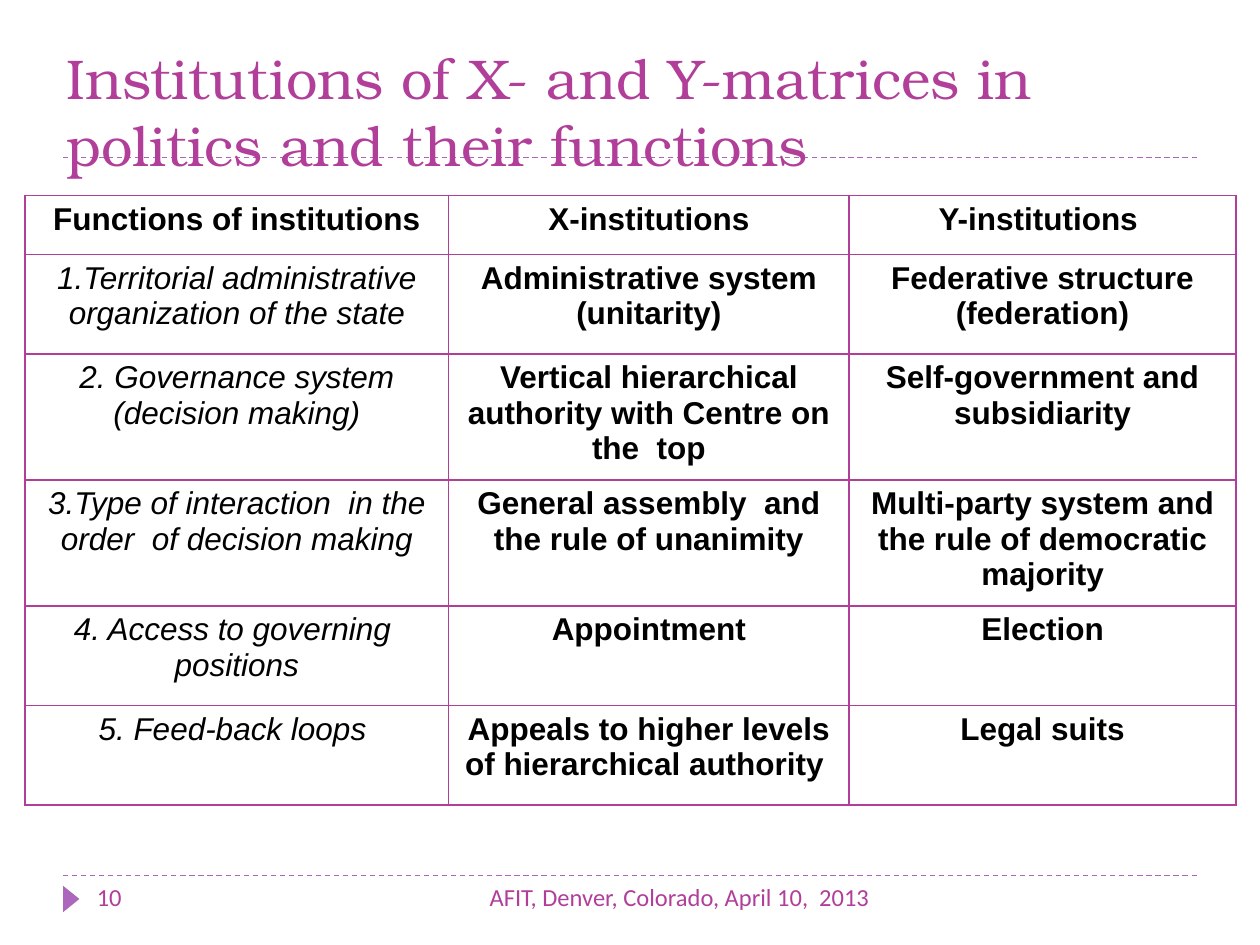
import pptx
import pptx.util
import pptx.dml.color
import pptx.enum.dml
import pptx.enum.shapes
import pptx.enum.text
import pptx.oxml
import pptx.oxml.ns
from lxml import etree

WIDE, HIGH = 10, 7.5
PINK, LILAC, BLACK = "B13F9A", "AC66BB", "000000"
SIDE = 0.05 * WIDE  # margin of the rules
COLS = [3.36, 3.18, 3.07]
ROWS = [0.47] + [0.79] * 5
CELLS = [
    ["Functions of institutions", "X-institutions", "Y-institutions "],
    ["1.Territorial administrative organization of the state",
     "Administrative system (unitarity)",
     "Federative structure (federation)"],
    ["2. Governance system (decision making)",
     "Vertical hierarchical authority with Centre on the  top",
     "Self-government and subsidiarity"],
    ["3.Type of interaction  in the order  of decision making",
     "General assembly  and the rule of unanimity",
     "Multi-party system and the rule of democratic majority"],
    ["4. Access to governing  positions", "Appointment", "Election"],
    ["5. Feed-back loops ",
     "Appeals to higher levels of hierarchical authority ",
     "Legal suits"],
]
ALIGN = pptx.enum.text.PP_ALIGN
ANCHOR = pptx.enum.text.MSO_ANCHOR
inch = pptx.util.Inches


def color(code):
    return pptx.dml.color.RGBColor.from_string(code)


def style(para, face, size, code, align=ALIGN.LEFT, bold=False, slant=False):
    para.alignment = align
    font = para.font
    font.name, font.size = face, pptx.util.Pt(size)
    font.bold, font.italic = bold, slant
    font.color.rgb = color(code)


def add_text(slide, box, words, face, size, align=ALIGN.LEFT,
             anchor=ANCHOR.TOP):
    frame = slide.shapes.add_textbox(*map(inch, box)).text_frame
    frame.word_wrap = True
    frame.vertical_anchor = anchor
    frame.text = words
    style(frame.paragraphs[0], face, size, PINK, align)


def add_rule(slide, y):
    rule = slide.shapes.add_connector(
        pptx.enum.shapes.MSO_CONNECTOR.STRAIGHT,
        inch(SIDE), inch(y), inch(WIDE - SIDE), inch(y))
    rule.line.color.rgb = color(LILAC)
    rule.line.width = pptx.util.Pt(0.75)
    rule.line.dash_style = pptx.enum.dml.MSO_LINE.DASH
    etree.SubElement(rule._element.spPr, pptx.oxml.ns.qn("a:effectLst"))


def add_mark(slide, box):
    mark = slide.shapes.add_shape(
        pptx.enum.shapes.MSO_SHAPE.ISOSCELES_TRIANGLE, *map(inch, box))
    mark.rotation = 90
    mark.shadow.inherit = False
    mark.fill.solid()
    mark.fill.fore_color.rgb = color(LILAC)
    mark.line.fill.background()


def add_edges(cell, code, points):
    props = cell._tc.get_or_add_tcPr()
    for spot, side in enumerate(("lnL", "lnR", "lnT", "lnB")):
        edge = pptx.oxml.parse_xml(
            f'<a:{side} {pptx.oxml.ns.nsdecls("a")} '
            f'w="{int(pptx.util.Pt(points))}"><a:solidFill>'
            f'<a:srgbClr val="{code}"/></a:solidFill></a:{side}>')
        props.insert(spot, edge)


def add_grid(slide, left, top):
    grid = slide.shapes.add_table(
        len(ROWS), len(COLS), inch(left), inch(top),
        inch(sum(COLS)), inch(sum(ROWS))).table
    for col, width in zip(grid.columns, COLS):
        col.width = inch(width)
    for row, height in zip(grid.rows, ROWS):
        row.height = inch(height)
    for r, line in enumerate(CELLS):
        for c, words in enumerate(line):
            cell = grid.cell(r, c)
            cell.text = words
            cell.fill.background()
            label = r > 0 and c == 0
            style(cell.text_frame.paragraphs[0], "Arial", 18, BLACK,
                  ALIGN.CENTER, bold=not label, slant=label)
            add_edges(cell, PINK, 1)


def main():
    deck = pptx.Presentation()
    deck.slide_width, deck.slide_height = inch(WIDE), inch(HIGH)
    slide = deck.slides.add_slide(deck.slide_layouts[6])
    foot = 6.95

    # Rules and page mark
    add_rule(slide, foot)
    add_rule(slide, HIGH / 6)
    add_mark(slide, (0.46, 7.07, 0.21, 0.13))

    # Title
    add_text(slide, (0.43, 0.21, 9, 1.25),
             "Institutions of X- and Y-matrices in politics "
             "and their functions",
             "TeX Gyre Bonum", 32, anchor=ANCHOR.BOTTOM)

    # Footer
    add_text(slide, (3.17, foot, 3.83, 0.4),
             "AFIT, Denver, Colorado, April 10,  2013",
             "Calibri", 14, ALIGN.RIGHT)
    add_text(slide, (0.67, foot, 2.17, 0.4), "10", "Calibri", 14)

    # Table of institutions
    add_grid(slide, 0.2, 1.55)
    deck.save("out.pptx")


if __name__ == "__main__":
    main()
